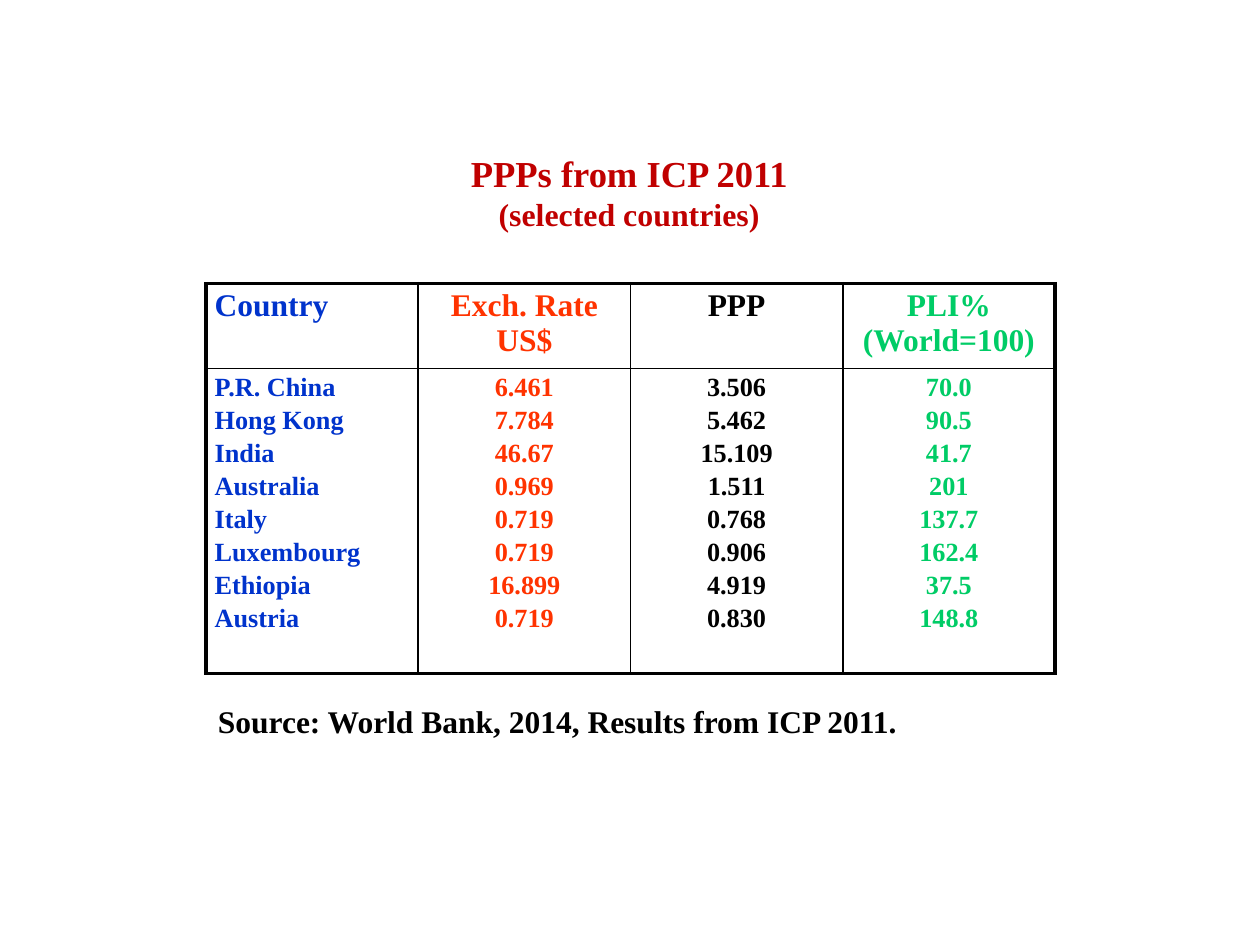
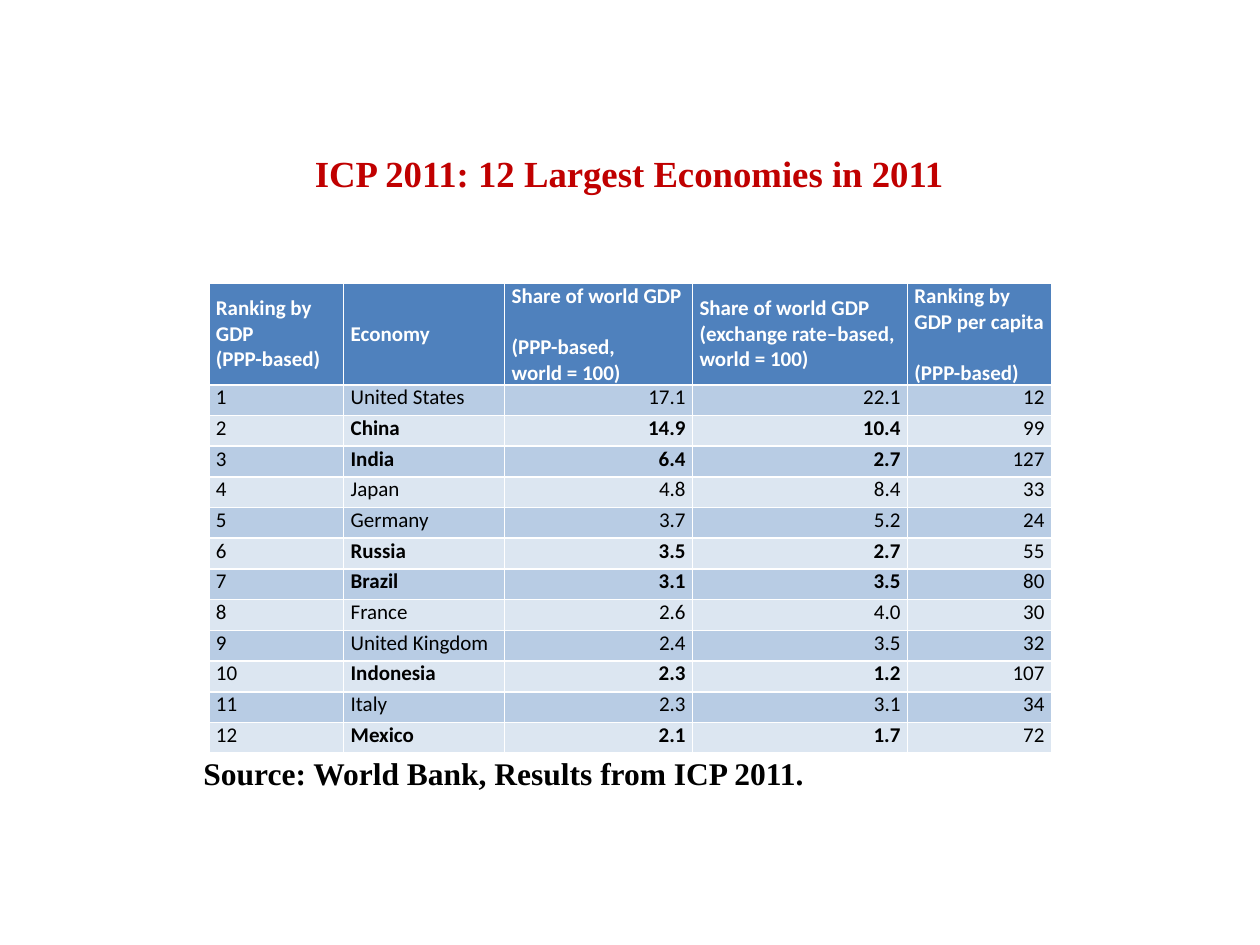
from lxml.etree import SubElement
from pptx import Presentation
from pptx.dml.color import RGBColor
from pptx.enum.text import MSO_ANCHOR, PP_ALIGN
from pptx.oxml.ns import qn
from pptx.util import Pt

COLORS = {
    "title": "C00000", "black": "000000", "white": "FFFFFF",
    "country": "0033CC", "rate": "FF3300", "index": "00CC66",
    "header": "4F81BD", "odd": "B8CCE4", "even": "DCE6F1",
}
SERIF, SANS = "Times New Roman", "Calibri"
LEFT, CENTER, RIGHT = PP_ALIGN.LEFT, PP_ALIGN.CENTER, PP_ALIGN.RIGHT
TITLE_AREA = (116.6, 83.5, 486, 41.8)
TABLE_TOP = 162

PPP_TITLE = ["PPPs from ICP 2011", "(selected countries)"]
PPP_SOURCE = "Source: World Bank, 2014, Results from ICP 2011."
PPP_COLUMNS = [
    ("Country", "country",
     ["P.R. China", "Hong Kong", "India", "Australia",
      "Italy", "Luxembourg", "Ethiopia", "Austria"]),
    ("Exch. Rate US$", "rate",
     ["6.461", "7.784", "46.67", "0.969", "0.719", "0.719", "16.899", "0.719"]),
    ("PPP", "black",
     ["3.506", "5.462", "15.109", "1.511", "0.768", "0.906", "4.919", "0.830"]),
    ("PLI% (World=100)", "index",
     ["70.0", "90.5", "41.7", "201", "137.7", "162.4", "37.5", "148.8"]),
]

ECONOMY_TITLE = ["ICP 2011: 12 Largest Economies in 2011"]
ECONOMY_SOURCE = "Source: World Bank, Results from ICP 2011."
# Lines of each heading, its width, and the line that has a gap above it
ECONOMY_COLUMNS = [
    (["Ranking by", "GDP", "(PPP-based)"], 77, None),
    (["Economy"], 92, None),
    (["Share of world GDP", "(PPP-based,", "world = 100)"], 107.4, 1),
    (["Share of world GDP", "(exchange rate–based,", "world = 100)"], 122.8, None),
    (["Ranking by", "GDP per capita", "(PPP-based)"], 82.3, 2),
]
ECONOMIES = [
    ("United States", "17.1", "22.1", "12"),
    ("China", "14.9", "10.4", "99"),
    ("India", "6.4", "2.7", "127"),
    ("Japan", "4.8", "8.4", "33"),
    ("Germany", "3.7", "5.2", "24"),
    ("Russia", "3.5", "2.7", "55"),
    ("Brazil", "3.1", "3.5", "80"),
    ("France", "2.6", "4.0", "30"),
    ("United Kingdom", "2.4", "3.5", "32"),
    ("Indonesia", "2.3", "1.2", "107"),
    ("Italy", "2.3", "3.1", "34"),
    ("Mexico", "2.1", "1.7", "72"),
]
EMPHASIZED = {"China", "India", "Russia", "Brazil", "Indonesia", "Mexico"}


def color(name):
    return RGBColor.from_string(COLORS[name])


def write(frame, lines, sizes=(18,), font=SERIF, ink="black", bold=True,
          align=LEFT, gaps=None):
    """Write one paragraph a line; the last size serves all further lines."""
    frame.word_wrap = True
    for number, line in enumerate(lines):
        para = frame.paragraphs[0] if number == 0 else frame.add_paragraph()
        para.alignment = align
        para.space_before = Pt((gaps or {}).get(number, 0))
        span = para.add_run()
        span.text = line
        span.font.size = Pt(sizes[min(number, len(sizes) - 1)])
        span.font.name = font
        span.font.bold = bold
        span.font.color.rgb = color(ink)


def set_margins(holder, across, down):
    holder.margin_left = holder.margin_right = Pt(across)
    holder.margin_top = holder.margin_bottom = Pt(down)


def add_text(page, area, lines, margins=(7.2, 3.6), **style):
    box = page.shapes.add_textbox(*map(Pt, area))
    set_margins(box.text_frame, *margins)
    write(box.text_frame, lines, **style)


def add_page(deck, title, sizes, source, source_area):
    page = deck.slides.add_slide(deck.slide_layouts[6])
    add_text(page, TITLE_AREA, title, margins=(5, 2.7), sizes=sizes,
             ink="title", align=CENTER)
    add_text(page, source_area, [source])
    return page


def add_grid(page, left, widths, heights):
    frame = page.shapes.add_table(len(heights), len(widths), Pt(left), Pt(TABLE_TOP),
                                  Pt(sum(widths)), Pt(sum(heights)))
    table = frame.table
    for column, width in zip(table.columns, widths):
        column.width = Pt(width)
    for row, height in zip(table.rows, heights):
        row.height = Pt(height)
    return table


def set_borders(cell, ink, **widths):
    """Draw the borders L, R, T and B, given in that order."""
    properties = cell._tc.get_or_add_tcPr()
    for side, width in widths.items():
        line = SubElement(properties, qn(f"a:ln{side}"), w=str(Pt(width)))
        fill = SubElement(line, qn("a:solidFill"))
        SubElement(fill, qn("a:srgbClr"), val=COLORS[ink])


def build_ppp_page(deck):
    page = add_page(deck, PPP_TITLE, (20.9, 18.2), PPP_SOURCE, (117.4, 397.4, 434, 29))
    thin, thick = 1, 2.25
    last = len(PPP_COLUMNS) - 1
    table = add_grid(page, 117.7, [121.3] * len(PPP_COLUMNS), [48.6, 174.2])
    for x, (heading, ink, values) in enumerate(PPP_COLUMNS):
        for y, (lines, size) in enumerate([([heading], 18), (values, 15)]):
            cell = table.cell(y, x)
            set_margins(cell, 5, 2.7)
            write(cell.text_frame, lines, sizes=(size,), ink=ink,
                  align=CENTER if x else LEFT,
                  gaps={number: 2.3 for number in range(1, len(lines))})
            set_borders(cell, "black", L=thick if x == 0 else thin,
                        R=thick if x == last else thin,
                        T=thick if y == 0 else thin,
                        B=thick if y == 1 else thin)
            cell.fill.background()


def build_economy_page(deck):
    page = add_page(deck, ECONOMY_TITLE, (21,), ECONOMY_SOURCE, (109.2, 427.5, 459, 29))
    widths = [width for _, width, _ in ECONOMY_COLUMNS]
    table = add_grid(page, 119.4, widths, [46.8] + [17.55] * len(ECONOMIES))

    def fill_cell(y, x, lines, background, **style):
        cell = table.cell(y, x)
        set_margins(cell, 4, 0)
        write(cell.text_frame, lines, sizes=(12,), font=SANS, **style)
        set_borders(cell, "white", L=1, R=1, T=1.5 if y == 1 else 1,
                    B=1.5 if y == 0 else 1)
        cell.fill.solid()
        cell.fill.fore_color.rgb = color(background)
        return cell

    for x, (lines, _, gapped) in enumerate(ECONOMY_COLUMNS):
        cell = fill_cell(0, x, lines, "header", ink="white", gaps={gapped: 14.6})
        cell.vertical_anchor = MSO_ANCHOR.MIDDLE
    for rank, economy in enumerate(ECONOMIES, 1):
        for x, value in enumerate((str(rank), *economy)):
            fill_cell(rank, x, [value], "odd" if rank % 2 else "even",
                      bold=economy[0] in EMPHASIZED and 1 <= x <= 3,
                      align=RIGHT if x >= 2 else LEFT)


def main():
    deck = Presentation()
    deck.slide_width, deck.slide_height = Pt(720), Pt(540)
    build_ppp_page(deck)
    build_economy_page(deck)
    deck.save("out.pptx")


if __name__ == "__main__":
    main()
